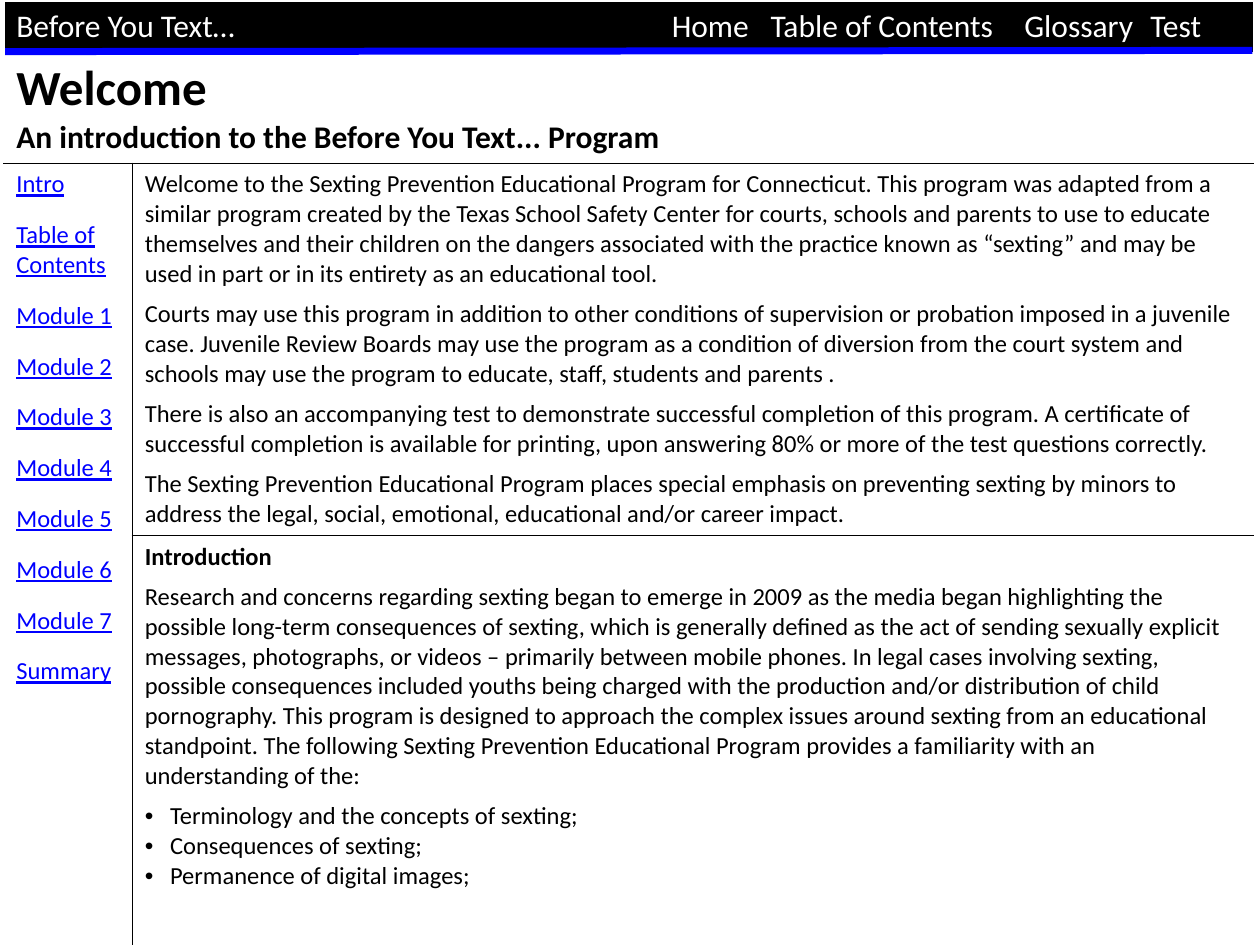
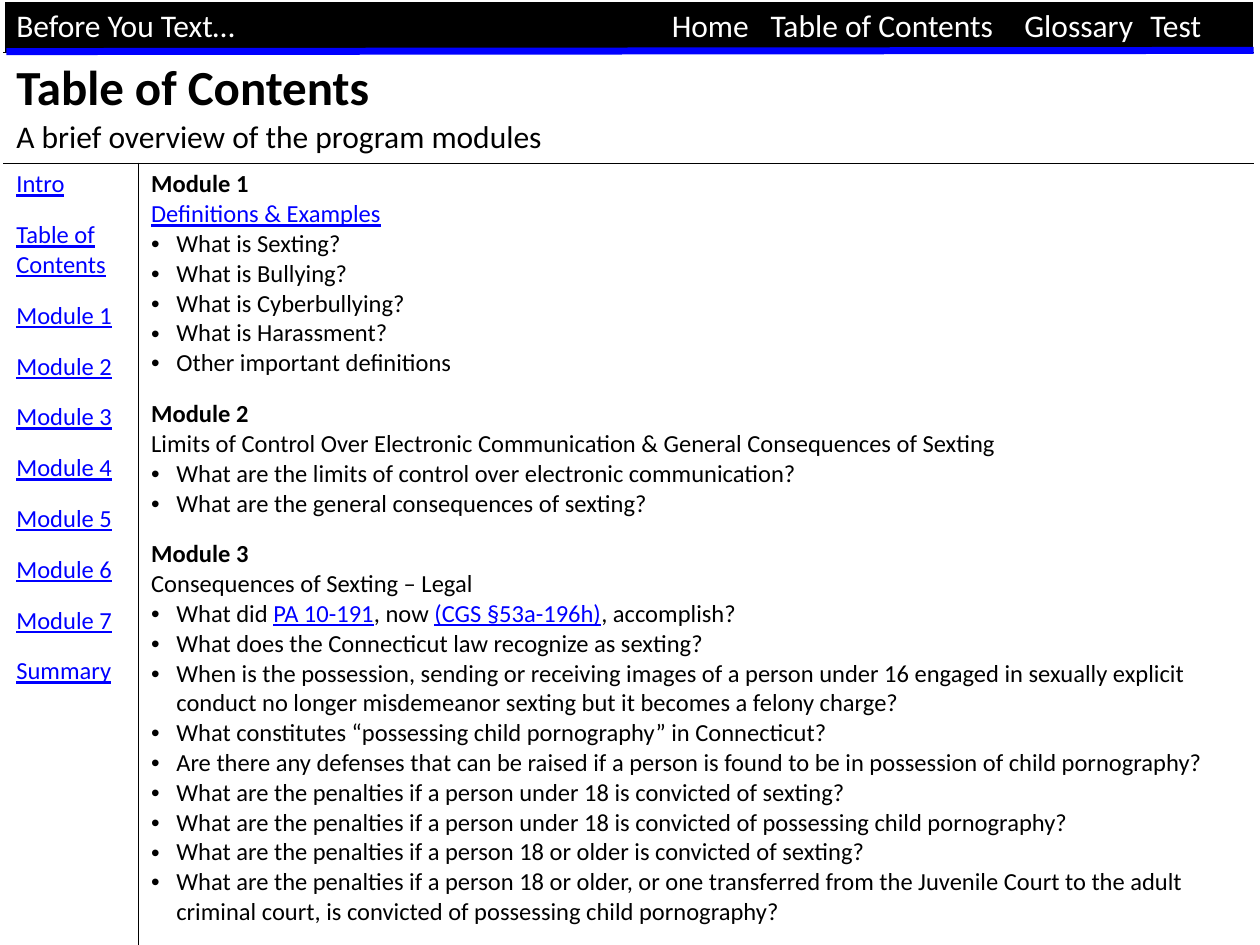
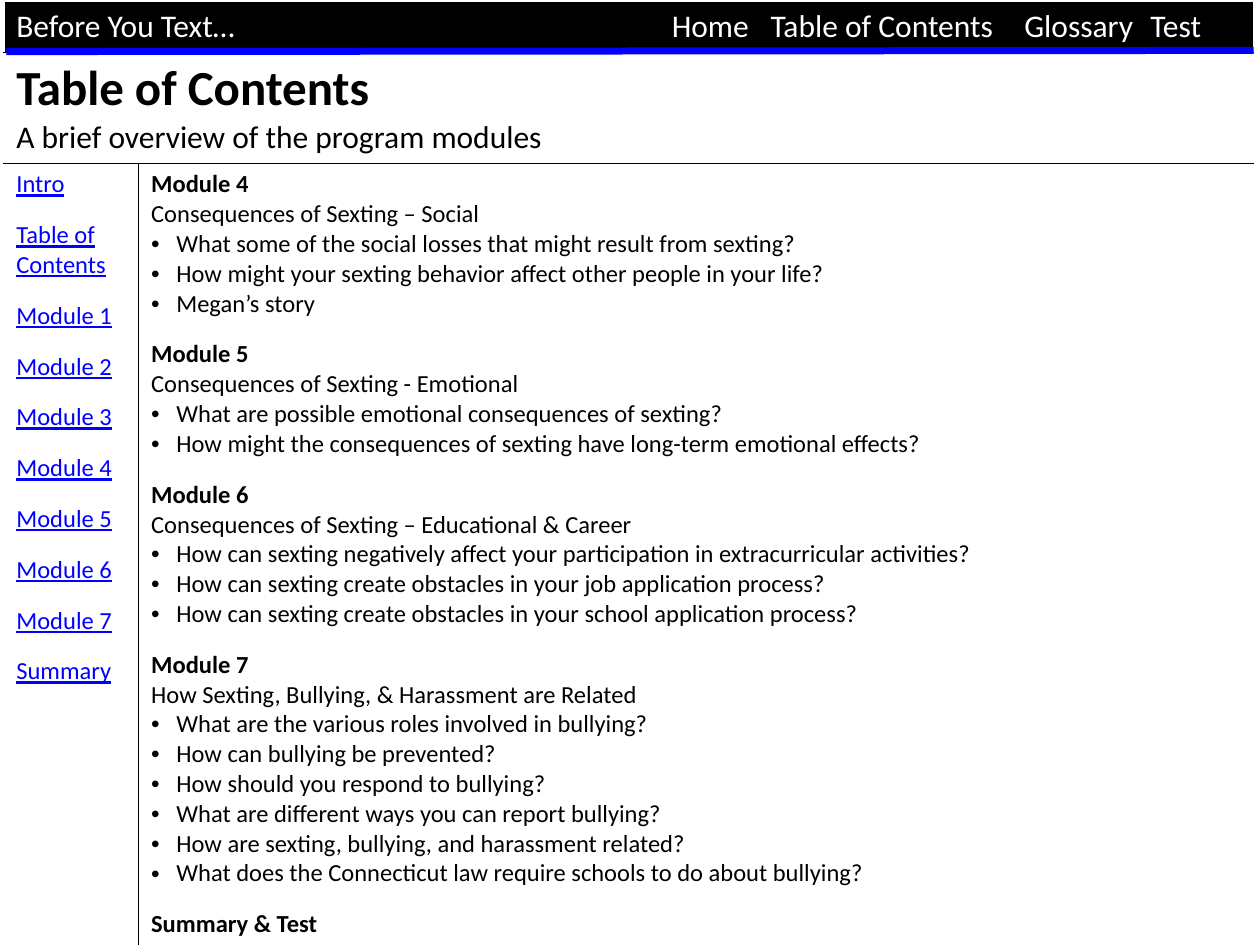
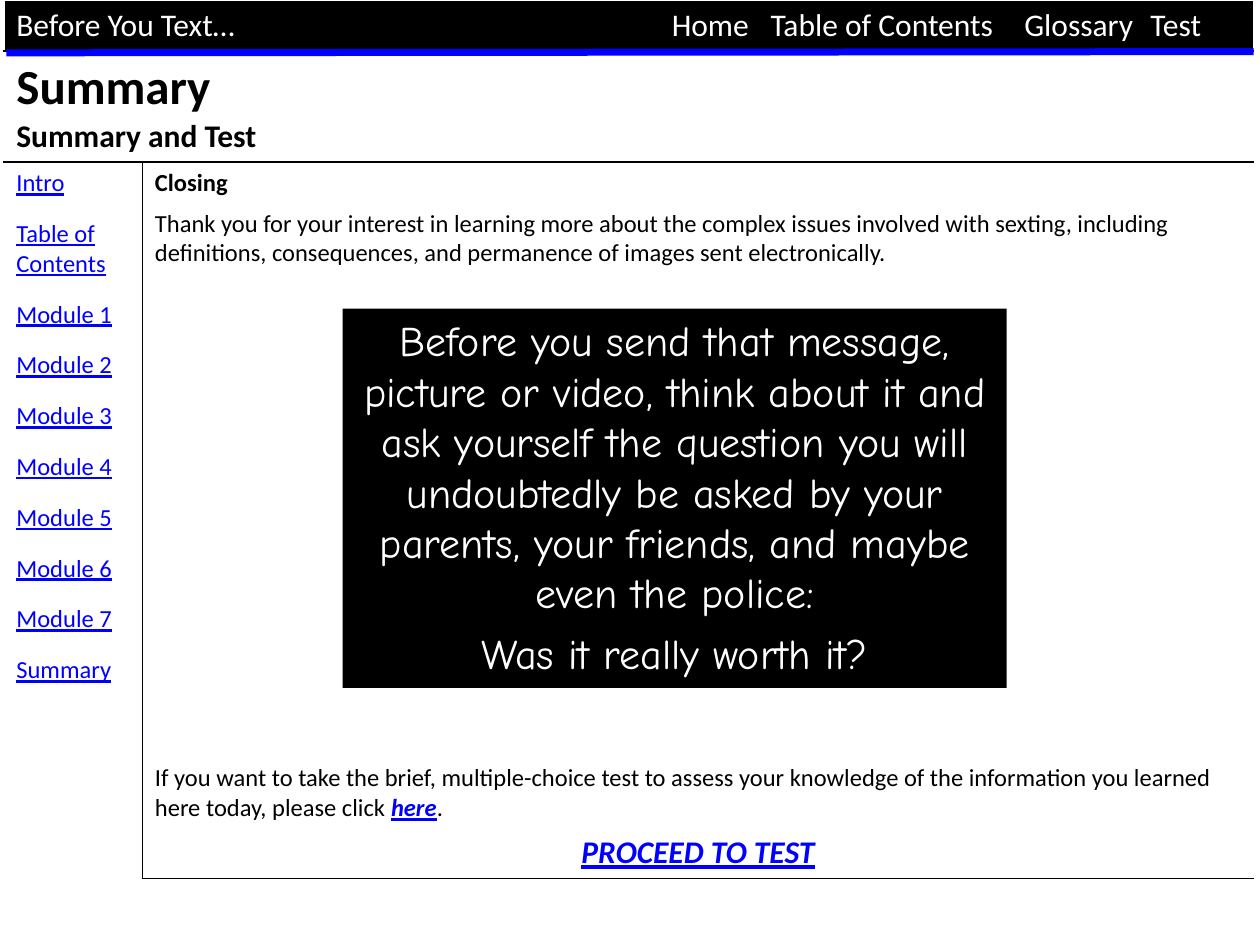
from dataclasses import dataclass
from lxml import etree
from pptx import Presentation
from pptx.dml.color import RGBColor
from pptx.enum import shapes, text
from pptx.oxml import ns
from pptx.util import Pt

BLACK = RGBColor(0x00, 0x00, 0x00)
WHITE = RGBColor(0xFF, 0xFF, 0xFF)
BLUE = RGBColor(0x00, 0x00, 0xFF)
BODY_FONT = "Calibri"
QUOTE_FONT = "Comic Neue"

TABLE_LEFT = 2.16
TABLE_WIDTH = 714.24
BAR_HEIGHT = 28.08
TITLE_HEIGHT = 60.5
BULLET_INDENT = 14.4
BAR_TEXT = "Before You Text…\tHome\tTable of Contents\tGlossary\tTest"
BAR_TABS = (374.5, 431, 576, 648)
NAV_ITEMS = ["Intro", "Table of Contents", *(f"Module {n}" for n in range(1, 8)), "Summary"]


@dataclass
class Line:
    """A paragraph; the parts of its text between bars look like links."""
    text: str
    size: float = 14
    color: RGBColor = BLACK
    bold: bool = False
    before: float = 0
    bullet: bool = False
    centered: bool = False
    strong_links: bool = False
    font: str = BODY_FONT


def add_child(parent, tag, **attributes):
    return etree.SubElement(parent, ns.qn(tag), **attributes)


def format_span(span, line, is_link):
    font = span.font
    font.name = line.font
    font.size = Pt(line.size)
    font.color.rgb = BLUE if is_link else line.color
    font.underline = is_link
    font.bold = line.bold or (is_link and line.strong_links)
    font.italic = is_link and line.strong_links


def write_lines(frame, lines):
    for index, line in enumerate(lines):
        para = frame.paragraphs[0] if index == 0 else frame.add_paragraph()
        para.space_before = Pt(line.before)
        para.alignment = text.PP_ALIGN.CENTER if line.centered else text.PP_ALIGN.LEFT
        for position, part in enumerate(line.text.split("|")):
            if part:
                span = para.add_run()
                span.text = part
                format_span(span, line, position % 2 == 1)
        if line.bullet:
            props = para._p.get_or_add_pPr()
            props.set("marL", str(Pt(BULLET_INDENT)))
            props.set("indent", str(-Pt(BULLET_INDENT)))
            add_child(props, "a:buFont", typeface="Arial")
            add_child(props, "a:buChar", char="•")


def set_borders(cell, left=WHITE, right=WHITE, top=WHITE, bottom=WHITE):
    props = cell._tc.get_or_add_tcPr()
    for side, color in zip("LRTB", (left, right, top, bottom)):
        edge = add_child(props, f"a:ln{side}", w=str(Pt(1)))
        add_child(add_child(edge, "a:solidFill"), "a:srgbClr", val=str(color))
    cell.fill.background()


def fill_bar(table, bottom):
    for cell in table.rows[0].cells:
        set_borders(cell, bottom=bottom)
        cell.fill.solid()
        cell.fill.fore_color.rgb = BLACK
    bar = table.cell(0, 0)
    bar.merge(table.cell(0, 1))
    write_lines(bar.text_frame, [Line(BAR_TEXT, 18, WHITE)])
    tabs = add_child(bar.text_frame.paragraphs[0]._p.get_or_add_pPr(), "a:tabLst")
    for stop in BAR_TABS:
        add_child(tabs, "a:tab", pos=str(Pt(stop)), algn="l")


def fill_title(table, title, subtitle, subtitle_bold, top):
    for cell in table.rows[1].cells:
        set_borders(cell, top=top, bottom=BLACK)
    heading = table.cell(1, 0)
    heading.merge(table.cell(1, 1))
    write_lines(heading.text_frame, [
        Line(title, 28, bold=True), Line(subtitle, 18, bold=subtitle_bold)])


def fill_navigation(table, row_count):
    for row in range(2, row_count):
        set_borders(table.cell(row, 0), right=BLACK, top=BLACK if row == 2 else WHITE)
    nav = table.cell(2, 0)
    if row_count > 3:
        nav.merge(table.cell(row_count - 1, 0))
    write_lines(nav.text_frame, [Line(f"|{item}|", before=12) for item in NAV_ITEMS])


def add_page(deck, title, subtitle, sections, heights, nav_width, subtitle_bold=False,
             bar_edge=BLACK, last_edge=WHITE, top=0.72, rule_left=3.6):
    page = deck.slides.add_slide(deck.slide_layouts[6])
    row_heights = [BAR_HEIGHT, TITLE_HEIGHT, *heights]
    table = page.shapes.add_table(
        len(row_heights), 2, Pt(TABLE_LEFT), Pt(top),
        Pt(TABLE_WIDTH), Pt(sum(row_heights))).table
    table.first_row = table.horz_banding = False
    for column, width in zip(table.columns, (nav_width, TABLE_WIDTH - nav_width)):
        column.width = Pt(width)
    for row, height in zip(table.rows, row_heights):
        row.height = Pt(height)
    fill_bar(table, bar_edge)
    fill_title(table, title, subtitle, subtitle_bold, bar_edge)
    fill_navigation(table, len(row_heights))
    for row, lines in enumerate(sections, start=2):
        cell = table.cell(row, 1)
        is_last = row == len(row_heights) - 1
        set_borders(cell, left=BLACK, top=BLACK, bottom=last_edge if is_last else BLACK)
        write_lines(cell.text_frame, lines)
    add_rule(page, rule_left, 30.2 if top == 0 else 29.5)
    return page


def add_rule(page, left, y):
    rule = page.shapes.add_connector(
        shapes.MSO_CONNECTOR.STRAIGHT, Pt(left), Pt(y), Pt(left + 712.8), Pt(y - 0.7))
    rule.line.color.rgb = BLUE
    rule.line.width = Pt(4)
    add_child(rule._element.spPr, "a:effectLst")


def add_quote(page, left, top, width, height, lines):
    box = page.shapes.add_shape(
        shapes.MSO_SHAPE.RECTANGLE, Pt(left), Pt(top), Pt(width), Pt(height))
    box.shadow.inherit = False
    box.fill.solid()
    box.fill.fore_color.rgb = BLACK
    box.line.fill.background()
    frame = box.text_frame
    frame.word_wrap = True
    frame.vertical_anchor = text.MSO_ANCHOR.TOP
    write_lines(frame, lines)


def bullets(*items):
    return [Line(item, bullet=True) for item in items]


def module(number, topic, *questions):
    return [Line(f"Module {number}", bold=True, before=12), Line(topic), *bullets(*questions)]


def add_welcome(deck):
    welcome = [Line(words, before=6) for words in (
        "Welcome to the Sexting Prevention Educational Program for Connecticut. This program was adapted from a similar program created by the Texas School Safety Center for courts, schools and parents to use to educate themselves and their children on the dangers associated with the practice known as “sexting” and may be used in part or in its entirety as an educational tool.",
        "Courts may use this program in addition to other conditions of supervision or probation imposed in a juvenile case. Juvenile Review Boards may use the program as a condition of diversion from the court system and schools may use the program to educate, staff, students and parents .",
        "There is also an accompanying test to demonstrate successful completion of this program. A certificate of successful completion is available for printing, upon answering 80% or more of the test questions correctly.",
        "The Sexting Prevention Educational Program places special emphasis on preventing sexting by minors to address the legal, social, emotional, educational and/or career impact.",
    )]
    welcome[0].before = 0
    topics = bullets(
        "Terminology and the concepts of sexting;",
        "Consequences of sexting;",
        "Permanence of digital images;")
    topics[0].before = 6
    introduction = [
        Line("Introduction", bold=True),
        Line("Research and concerns regarding sexting began to emerge in 2009 as the media began highlighting the possible long-term consequences of sexting, which is generally defined as the act of sending sexually explicit messages, photographs, or videos – primarily between mobile phones. In legal cases involving sexting, possible consequences included youths being charged with the production and/or distribution of child pornography. This program is designed to approach the complex issues around sexting from an educational standpoint. The following Sexting Prevention Educational Program provides a familiarity with an understanding of the:", before=6),
        *topics]
    add_page(deck, "Welcome", "An introduction to the Before You Text... Program",
             [welcome, introduction], [175, 236], 73.44, subtitle_bold=True,
             bar_edge=WHITE, rule_left=2.9)


def add_contents(deck, lines):
    lines[0].before = 0
    add_page(deck, "Table of Contents", "A brief overview of the program modules",
             [lines], [450.7], 77.04)


def add_summary(deck):
    closing = [
        Line("Closing", bold=True),
        Line("Thank you for your interest in learning more about the complex issues involved with sexting, including definitions, consequences, and permanence of images sent electronically.", before=6),
        Line("If you want to take the brief, multiple-choice test to assess your knowledge of the information you learned here today, please click |here|.", before=283, strong_links=True),
        Line("|PROCEED TO TEST|", 18, before=6, centered=True, strong_links=True)]
    page = add_page(deck, "Summary", "Summary and Test", [closing], [408.24], 79.2,
                    subtitle_bold=True, last_edge=BLACK, top=0)
    quote = [Line(words, 24, WHITE, before=before, centered=True, font=QUOTE_FONT)
             for words, before in (
        ("Before you send that message, picture or video, think about it and ask yourself the question you will undoubtedly be asked by your parents, your friends, and maybe even the police:", 0),
        ("Was it really worth it?", 6))]
    add_quote(page, 195.84, 176.4, 379.44, 216.72, quote)


def main():
    deck = Presentation()
    deck.slide_width, deck.slide_height = Pt(720), Pt(540)
    add_welcome(deck)
    add_contents(deck, [
        *module(1, "|Definitions & Examples|",
                "What is Sexting?",
                "What is Bullying?",
                "What is Cyberbullying?",
                "What is Harassment?",
                "Other important definitions"),
        *module(2, "Limits of Control Over Electronic Communication & General Consequences of Sexting",
                "What are the limits of control over electronic communication?",
                "What are the general consequences of sexting?"),
        *module(3, "Consequences of Sexting – Legal",
                "What did |PA 10-191|, now |(CGS §53a-196h)|, accomplish?",
                "What does the Connecticut law recognize as sexting?",
                "When is the possession, sending or receiving images of a person under 16 engaged in sexually explicit conduct no longer misdemeanor sexting but it becomes a felony charge?",
                "What constitutes “possessing child pornography” in Connecticut?",
                "Are there any defenses that can be raised if a person is found to be in possession of child pornography?",
                "What are the penalties if a person under 18 is convicted of sexting?",
                "What are the penalties if a person under 18 is convicted of possessing child pornography?",
                "What are the penalties if a person 18 or older is convicted of sexting?",
                "What are the penalties if a person 18 or older, or one transferred from the Juvenile Court to the adult criminal court, is convicted of possessing child pornography?")])
    add_contents(deck, [
        *module(4, "Consequences of Sexting – Social",
                "What some of the social losses that might result from sexting?",
                "How might your sexting behavior affect other people in your life?",
                "Megan’s story"),
        *module(5, "Consequences of Sexting - Emotional",
                "What are possible emotional consequences of sexting?",
                "How might the consequences of sexting have long-term emotional effects?"),
        *module(6, "Consequences of Sexting – Educational & Career",
                "How can sexting negatively affect your participation in extracurricular activities?",
                "How can sexting create obstacles in your job application process?",
                "How can sexting create obstacles in your school application process?"),
        *module(7, "How Sexting, Bullying, & Harassment are Related",
                "What are the various roles involved in bullying?",
                "How can bullying be prevented?",
                "How should you respond to bullying?",
                "What are different ways you can report bullying?",
                "How are sexting, bullying, and harassment related?",
                "What does the Connecticut law require schools to do about bullying?"),
        Line("Summary & Test", bold=True, before=12)])
    add_summary(deck)
    deck.save("out.pptx")


if __name__ == "__main__":
    main()
